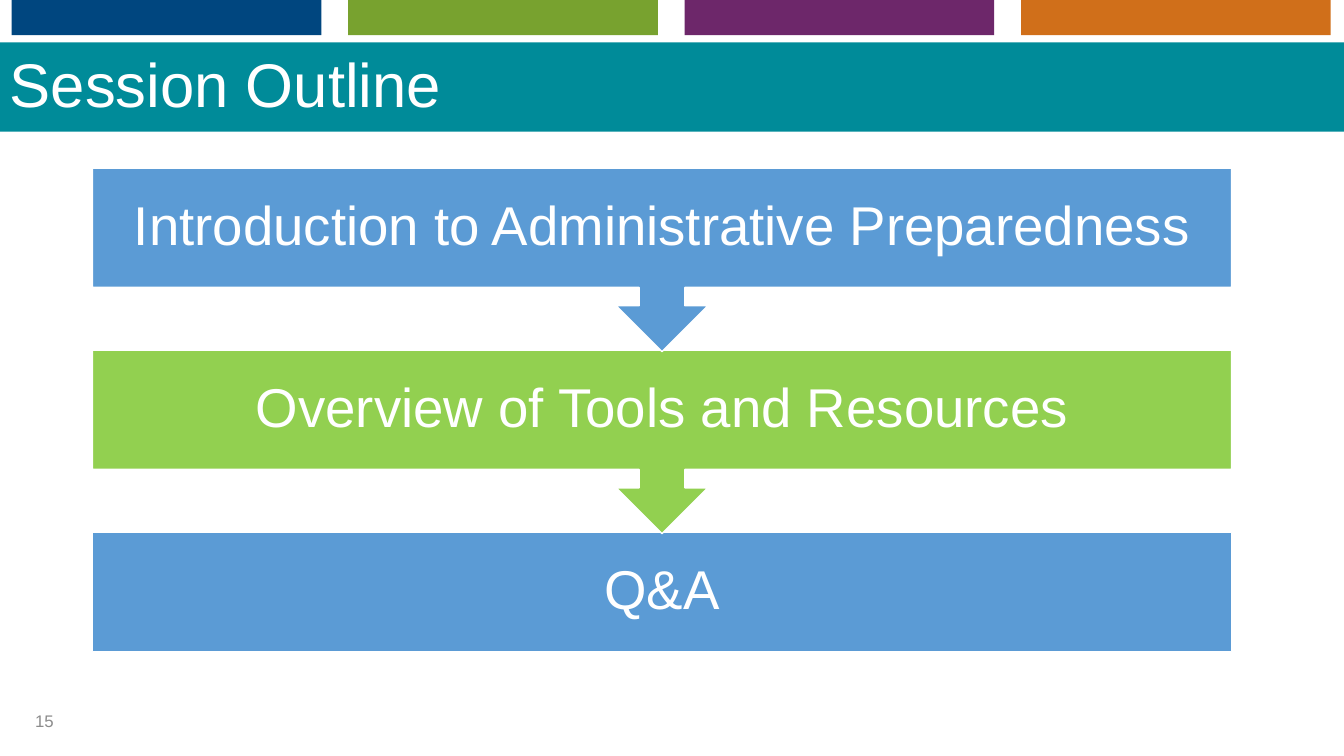
from pptx import Presentation
from pptx.dml.color import RGBColor
from pptx.enum.shapes import MSO_SHAPE
from pptx.enum.text import MSO_ANCHOR, PP_ALIGN
from pptx.util import Pt

RECTANGLE = MSO_SHAPE.RECTANGLE
ARROW_CALLOUT = MSO_SHAPE.DOWN_ARROW_CALLOUT
MIDDLE = MSO_ANCHOR.MIDDLE
CENTER = PP_ALIGN.CENTER

WHITE = RGBColor(0xFF, 0xFF, 0xFF)
TEAL = RGBColor(0x00, 0x8B, 0x99)
NAVY = RGBColor(0x00, 0x46, 0x7F)
OLIVE = RGBColor(0x78, 0xA2, 0x2F)
PURPLE = RGBColor(0x6D, 0x27, 0x6A)
ORANGE = RGBColor(0xD0, 0x6F, 0x1A)
BLUE = RGBColor(0x5B, 0x9B, 0xD5)
GREEN = RGBColor(0x92, 0xD0, 0x50)
GRAY = RGBColor(0x8C, 0x8C, 0x8C)


def add_block(preset, left, top, width, height, color):
    block = slide.shapes.add_shape(preset, Pt(left), Pt(top), Pt(width), Pt(height))
    block.shadow.inherit = False
    block.fill.solid()
    block.fill.fore_color.rgb = color
    block.line.fill.background()
    return block


def write(shape, text, size, color):
    """Put one vertically centred paragraph in the shape and return it."""
    frame = shape.text_frame
    frame.word_wrap = True
    frame.vertical_anchor = MIDDLE
    frame.text = text
    paragraph = frame.paragraphs[0]
    font = paragraph.runs[0].font
    font.name = "Arial"
    font.size = Pt(size)
    font.color.rgb = color
    return paragraph


prs = Presentation()
prs.slide_width = Pt(960)
prs.slide_height = Pt(540)
slide = prs.slides.add_slide(prs.slide_layouts[6])

# Header band and colour tabs
add_block(RECTANGLE, 0, 30.2, 960, 63.8, TEAL)
for i, tab_color in enumerate([NAVY, OLIVE, PURPLE, ORANGE]):
    add_block(RECTANGLE, 8.4 + 240.3 * i, 0, 221.2, 25.2, tab_color)

title = slide.shapes.add_textbox(Pt(0), Pt(33.1), Pt(828), Pt(58.3))
write(title, "Session Outline", 44, WHITE).line_spacing = 0.9

# Session steps, last one at the back so that each arrow tip overlaps the next step
STEP_TOP, STEP_PITCH = 120.2, 130
steps = [
    ("Introduction to Administrative Preparedness", BLUE, ARROW_CALLOUT, 131),
    ("Overview of Tools and Resources", GREEN, ARROW_CALLOUT, 131),
    ("Q&A", BLUE, RECTANGLE, 85.2),
]
for i, (topic, step_color, preset, height) in reversed(list(enumerate(steps))):
    step = add_block(preset, 66.1, STEP_TOP + STEP_PITCH * i, 813.6, height, step_color)
    step.line.color.rgb = WHITE
    step.line.width = Pt(1)
    frame = step.text_frame
    frame.margin_left = frame.margin_right = Pt(21.6)
    frame.margin_top = frame.margin_bottom = Pt(21.6)
    paragraph = write(step, topic, 39, WHITE)
    paragraph.alignment = CENTER
    paragraph.line_spacing = 0.9

page_number = slide.shapes.add_textbox(Pt(18), Pt(500.4), Pt(216), Pt(28.8))
write(page_number, "15", 12, GRAY)

prs.save("out.pptx")
